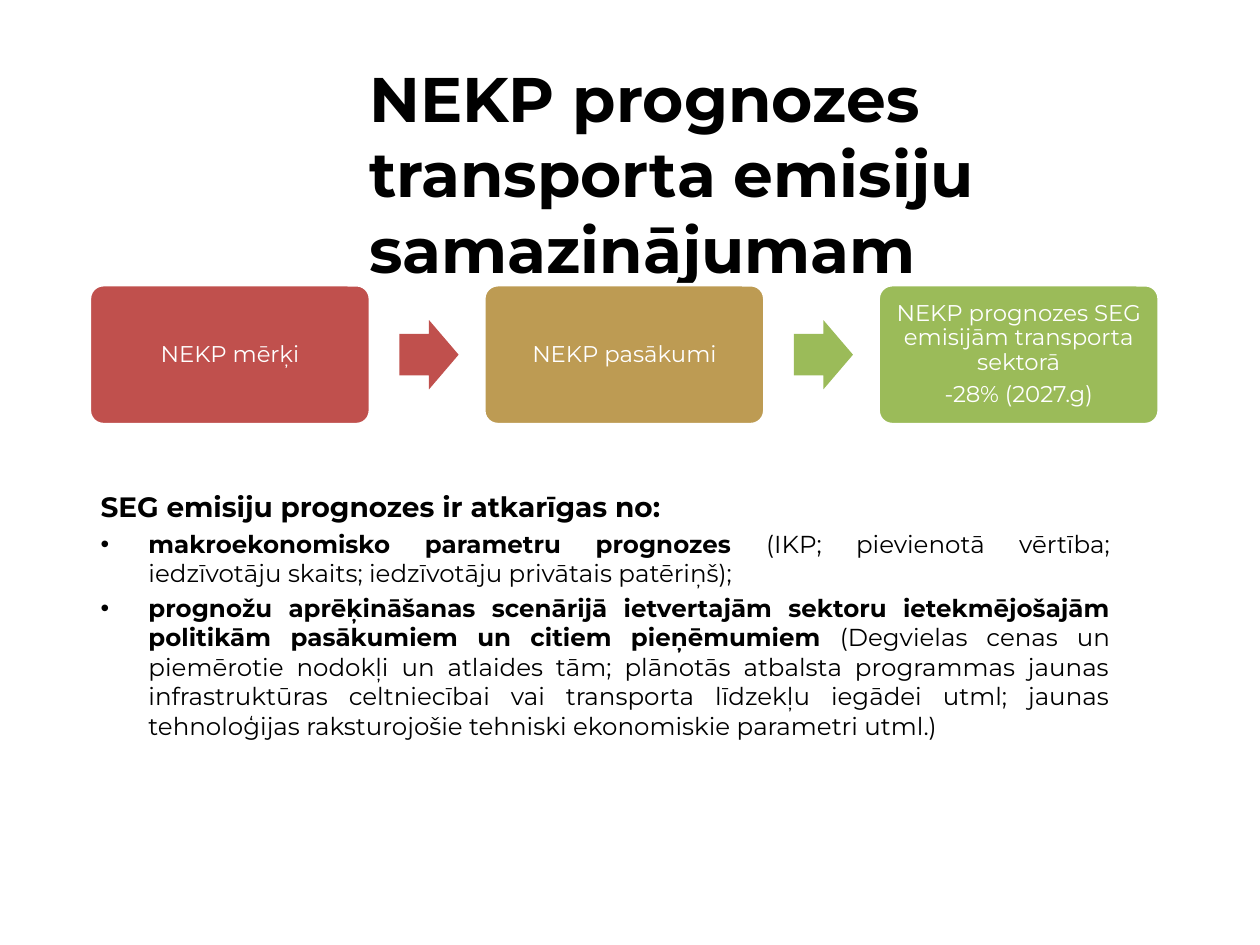
from lxml import etree
from pptx import Presentation
from pptx.dml.color import RGBColor
from pptx.enum import shapes, text
from pptx.oxml.ns import qn
from pptx.util import Inches, Pt

FONT = "Montserrat"
BLACK = RGBColor(0x00, 0x00, 0x00)
WHITE = RGBColor(0xFF, 0xFF, 0xFF)
RED = RGBColor(0xC0, 0x50, 0x4D)
GOLD = RGBColor(0xBD, 0x9B, 0x53)
GREEN = RGBColor(0x9B, 0xBB, 0x59)

STEPS = [
    (["NEKP mērķi"], RED),
    (["NEKP pasākumi"], GOLD),
    (["NEKP prognozes SEG emisijām transporta sektorā", "-28% (2027.g)"], GREEN),
]
HEADING = "SEG emisiju prognozes ir atkarīgas no:"
FACTORS = [
    ("makroekonomisko parametru prognozes ",
     "(IKP; pievienotā vērtība; iedzīvotāju skaits; iedzīvotāju privātais patēriņš);"),
    ("prognožu aprēķināšanas scenārijā ietvertajām sektoru ietekmējošajām "
     "politikām pasākumiem un citiem pieņēmumiem",
     " (Degvielas cenas un piemērotie nodokļi un atlaides tām; plānotās atbalsta "
     "programmas jaunas infrastruktūras celtniecībai vai transporta līdzekļu iegādei "
     "utml; jaunas tehnoloģijas raksturojošie tehniski ekonomiskie parametri utml.)"),
]


def style_run(r, size, color, bold=False):
    r.font.name = FONT
    r.font.size = Pt(size)
    r.font.bold = bold
    r.font.color.rgb = color


def add_title(slide, left, top, width, height):
    title = slide.shapes.title
    title.left, title.top, title.width, title.height = left, top, width, height
    tf = title.text_frame
    tf.text = "NEKP prognozes transporta emisiju samazinājumam"
    tf.word_wrap = True
    tf.auto_size = text.MSO_AUTO_SIZE.NONE
    tf.vertical_anchor = text.MSO_ANCHOR.TOP
    p = tf.paragraphs[0]
    p.alignment = text.PP_ALIGN.LEFT
    style_run(p.runs[0], 36, BLACK, bold=True)


def add_filled(slide, kind, box, color, adjustments):
    sp = slide.shapes.add_shape(kind, *box)
    sp.shadow.inherit = False
    sp.fill.solid()
    sp.fill.fore_color.rgb = color
    sp.line.fill.background()
    for i, value in enumerate(adjustments):
        sp.adjustments[i] = value
    return sp


def add_step(slide, box, lines, color):
    sp = add_filled(slide, shapes.MSO_SHAPE.ROUNDED_RECTANGLE, box, color, [0.1])
    sp.line.color.rgb = WHITE
    sp.line.width = Pt(2)
    tf = sp.text_frame
    tf.word_wrap = True
    tf.vertical_anchor = text.MSO_ANCHOR.MIDDLE
    tf.margin_left = tf.margin_right = Inches(0.05)
    tf.margin_top = tf.margin_bottom = Inches(0.05)
    tf.text = "\n".join(lines)
    for p in tf.paragraphs:
        p.alignment = text.PP_ALIGN.CENTER
        p.line_spacing = 0.9
        p.space_after = Pt(4.5)
        style_run(p.runs[0], 13, WHITE)


def add_process(slide, left, top, width, height):
    """Equal steps in a row, each later one led into by an arrow of its colour scheme."""
    step_w = Inches(2.23)
    arrow_w, arrow_h = Inches(0.47), Inches(0.55)
    pitch = (width - step_w) // (len(STEPS) - 1)
    arrow_colors = [RED, GREEN]
    for i, (lines, color) in enumerate(STEPS):
        x = left + i * pitch
        add_step(slide, (x, top, step_w, height), lines, color)
        if i < len(arrow_colors):
            arrow = (x + step_w + Inches(0.23), top + (height - arrow_h) // 2,
                     arrow_w, arrow_h)
            add_filled(slide, shapes.MSO_SHAPE.RIGHT_ARROW, arrow,
                       arrow_colors[i], [0.6, 0.5])


def set_bullet(p, indent):
    pPr = p._p.get_or_add_pPr()
    pPr.set("marL", str(indent))
    pPr.set("indent", str(-indent))
    etree.SubElement(pPr, qn("a:buFont")).set("typeface", "Arial")
    etree.SubElement(pPr, qn("a:buChar")).set("char", "•")


def add_factors(slide, left, top, width, height):
    tf = slide.shapes.add_textbox(left, top, width, height).text_frame
    tf.word_wrap = True
    p = tf.paragraphs[0]
    p.text = HEADING
    style_run(p.runs[0], 16, BLACK, bold=True)
    for name, details in FACTORS:
        p = tf.add_paragraph()
        p.alignment = text.PP_ALIGN.JUSTIFY
        p.space_before = Pt(3)
        set_bullet(p, Inches(0.38))
        for words, bold in ((name, True), (details, False)):
            r = p.add_run()
            r.text = words
            style_run(r, 14, BLACK, bold)


def main():
    prs = Presentation()
    prs.slide_width, prs.slide_height = Inches(10), Inches(7.5)
    slide = prs.slides.add_slide(prs.slide_layouts[5])
    add_title(slide, Inches(2.83), Inches(0.42), Inches(6.67), Inches(1.13))
    add_factors(slide, Inches(0.7), Inches(3.84), Inches(8.21), Inches(2.83))
    add_process(slide, Inches(0.71), Inches(2.26), Inches(8.49), Inches(1.11))
    prs.save("out.pptx")


if __name__ == "__main__":
    main()
